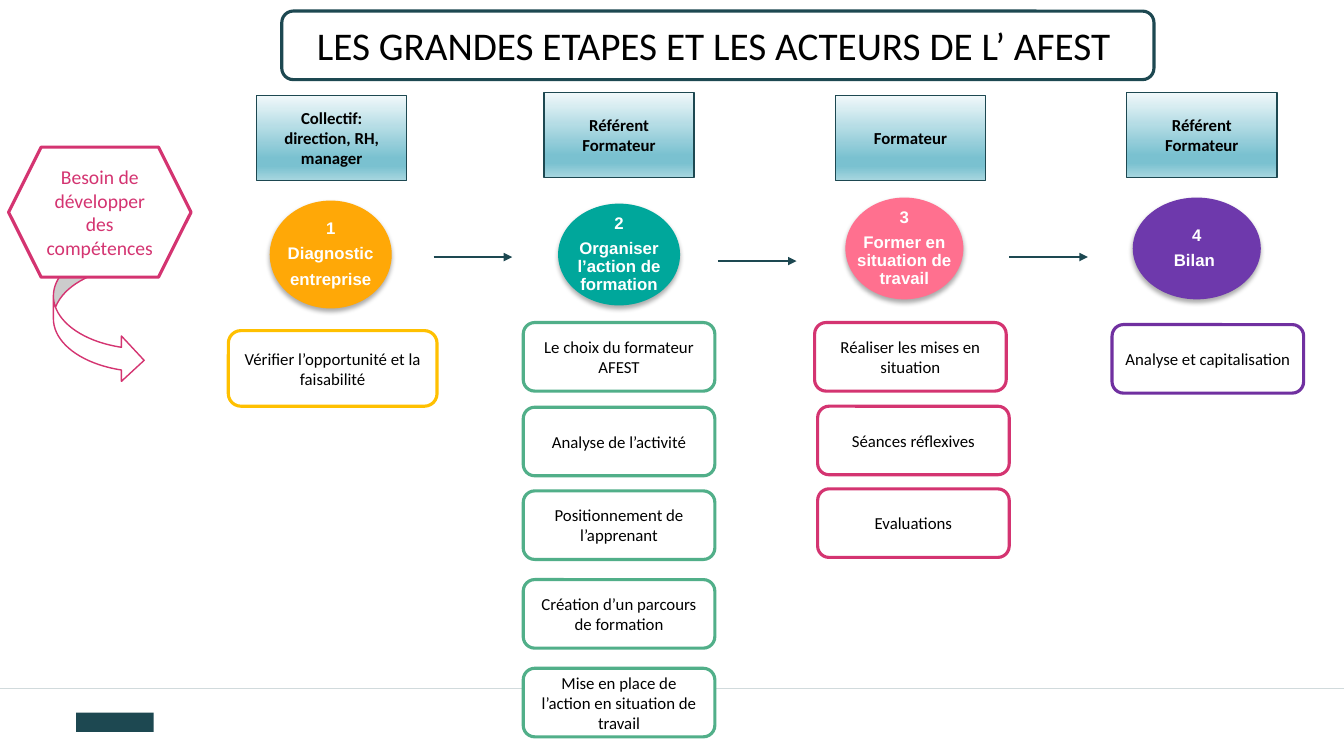
from lxml.etree import SubElement
from pptx import Presentation
from pptx.dml.color import RGBColor
from pptx.enum.shapes import MSO_CONNECTOR, MSO_SHAPE
from pptx.enum.text import MSO_ANCHOR, PP_ALIGN
from pptx.oxml.ns import qn
from pptx.util import Inches, Pt

COLORS = {
    "navy": "1D4851", "teal": "00A79B", "green": "51AF89", "orange": "FFA807",
    "amber": "FFC000", "rose": "FF708F", "magenta": "D43471", "violet": "6E39AC",
    "purple": "7030A0", "white": "FFFFFF", "black": "000000",
}
ROLE_GRADIENT = [(0, "F0F8FA"), (74, "7AC1D0"), (83, "7AC1D0"), (100, "A7D6DF")]

TITLE = "LES GRANDES ETAPES ET LES ACTEURS DE L’ AFEST "
NEED = "Besoin de développer des compétences"

# Boxes are (centre x, top, width, height) in inches; cards are (centre x, top, text)
STEPS = [
    {"role": ["Collectif: direction, RH, manager"], "role_at": (3.29, 0.95),
     "label": ["1", "Diagnostic", "entreprise"], "oval": (3.28, 1.99, 1.21, 1.07),
     "fill": "orange", "outline": "amber", "card_size": (2.07, 0.75),
     "cards": [(3.3, 3.28, "Vérifier l’opportunité et la faisabilité")]},
    {"role": ["Référent", "Formateur"], "role_at": (6.14, 0.92),
     "label": ["2", "Organiser l’action de formation"], "oval": (6.14, 2.02, 1.21, 1.01),
     "fill": "teal", "outline": "green", "card_size": (1.9, 0.68),
     "cards": [(6.14, 3.2, "Le choix du formateur AFEST"),
               (6.14, 4.04, "Analyse de l’activité"),
               (6.14, 4.87, "Positionnement de l’apprenant"),
               (6.14, 5.75, "Création d’un parcours de formation"),
               (6.14, 6.63, "Mise en place de l’action en situation de travail")]},
    {"role": ["Formateur"], "role_at": (9.03, 0.95),
     "label": ["3", "Former en situation de travail"], "oval": (8.97, 1.96, 1.17, 1.01),
     "fill": "rose", "outline": "magenta", "card_size": (1.9, 0.68),
     "cards": [(9.03, 3.2, "Réaliser les mises en situation"),
               (9.06, 4.03, "Séances réflexives"),
               (9.06, 4.85, "Evaluations")]},
    {"role": ["Référent", "Formateur"], "role_at": (11.92, 0.92),
     "label": ["4", "Bilan "], "oval": (11.87, 1.96, 1.27, 1.01),
     "fill": "violet", "outline": "purple", "card_size": (1.9, 0.68),
     "cards": [(11.98, 3.22, "Analyse et capitalisation")]},
]
ROLE_SIZE = (1.49, 0.84)
ARROW_STARTS = [(4.3, 2.55), (7.12, 2.59), (10.01, 2.55)]
ARROW_LENGTH = 0.78

presentation = Presentation()
presentation.slide_width, presentation.slide_height = Inches(13.33), Inches(7.5)
slide = presentation.slides.add_slide(presentation.slide_layouts[6])


def rgb(name):
    return RGBColor.from_string(COLORS[name])


def add_box(kind, center, top, width, height, fill="white", outline=None, weight=2.25):
    shape = slide.shapes.add_shape(kind, Inches(center - width / 2), Inches(top),
                                   Inches(width), Inches(height))
    shape.shadow.inherit = False
    shape.fill.solid()
    shape.fill.fore_color.rgb = rgb(fill)
    if outline:
        shape.line.color.rgb = rgb(outline)
        shape.line.width = Pt(weight)
    else:
        shape.line.fill.background()
    return shape


def write(shape, lines, size=12, color="black", bold=False, font="Calibri"):
    frame = shape.text_frame
    frame.word_wrap = True
    frame.vertical_anchor = MSO_ANCHOR.MIDDLE
    frame.text = "\n".join(lines)
    for paragraph in frame.paragraphs:
        paragraph.alignment = PP_ALIGN.CENTER
        paragraph.font.size = Pt(size)
        paragraph.font.name = font
        paragraph.font.bold = bold
        paragraph.font.color.rgb = rgb(color)
    return frame


def add_color(parent, value, alpha=None):
    color = SubElement(parent, qn("a:srgbClr"), val=value)
    if alpha:
        SubElement(color, qn("a:alpha"), val=str(alpha * 1000))


def add_line(start_x, start_y, length, weight):
    line = slide.shapes.add_connector(MSO_CONNECTOR.STRAIGHT, Inches(start_x), Inches(start_y),
                                      Inches(start_x + length), Inches(start_y))
    line.line.color.rgb = rgb("navy")
    line.line.width = Pt(weight)
    SubElement(line._element.spPr, qn("a:effectLst"))
    return line


def add_role(step):
    shape = add_box(MSO_SHAPE.RECTANGLE, *step["role_at"], *ROLE_SIZE, outline="navy", weight=1)
    shape.fill.gradient()
    shape.fill.gradient_angle = 270
    stops = shape._element.spPr.find(qn("a:gradFill")).find(qn("a:gsLst"))
    for stop in list(stops):
        stops.remove(stop)
    for position, value in ROLE_GRADIENT:
        add_color(SubElement(stops, qn("a:gs"), pos=str(position * 1000)), value)
    write(shape, step["role"], bold=True)


def add_oval(step):
    shape = add_box(MSO_SHAPE.OVAL, *step["oval"], fill=step["fill"])
    effects = shape._element.spPr.find(qn("a:effectLst"))
    shadow = SubElement(effects, qn("a:outerShdw"), blurRad=str(Pt(3.5)), dist=str(Pt(2.2)),
                        dir="5400000", rotWithShape="0")
    add_color(shadow, COLORS["black"], 32)
    frame = write(shape, step["label"], color="white", bold=True, font="Arial")
    # Let the label use the full width of the oval
    frame.margin_left = frame.margin_right = Inches(-0.1)
    frame.margin_top = frame.margin_bottom = 0
    for paragraph in frame.paragraphs:
        paragraph.line_spacing = 0.9
        paragraph.space_after = Pt(5)


# Footer rule and plain mark
footer = add_line(0, 6.83, 13.33, 0.5)
footer_color = footer._element.spPr.find(".//" + qn("a:srgbClr"))
SubElement(footer_color, qn("a:alpha"), val="20000")
add_box(MSO_SHAPE.RECTANGLE, 1.14, 7.07, 0.77, 0.19, fill="navy")

# Title
write(add_box(MSO_SHAPE.ROUNDED_RECTANGLE, 7.12, 0.11, 8.65, 0.68, outline="navy"), [TITLE], 28)

# Starting need, with the arrow that leaves from behind it
add_box(MSO_SHAPE.CURVED_RIGHT_ARROW, 0.98, 2.41, 0.9, 1.39, outline="magenta", weight=1)
write(add_box(MSO_SHAPE.HEXAGON, 0.99, 1.46, 1.81, 1.29, outline="magenta"),
      [NEED], 14, "magenta")

# Steps: role, numbered oval, cards
for step in STEPS:
    add_role(step)
    add_oval(step)
    for center, top, text in step["cards"]:
        card = add_box(MSO_SHAPE.ROUNDED_RECTANGLE, center, top, *step["card_size"],
                       outline=step["outline"])
        write(card, [text])

# Arrows between steps
for start_x, start_y in ARROW_STARTS:
    arrow = add_line(start_x, start_y, ARROW_LENGTH, 2)
    SubElement(arrow.line._get_or_add_ln(), qn("a:tailEnd"), type="triangle")

presentation.save("out.pptx")
